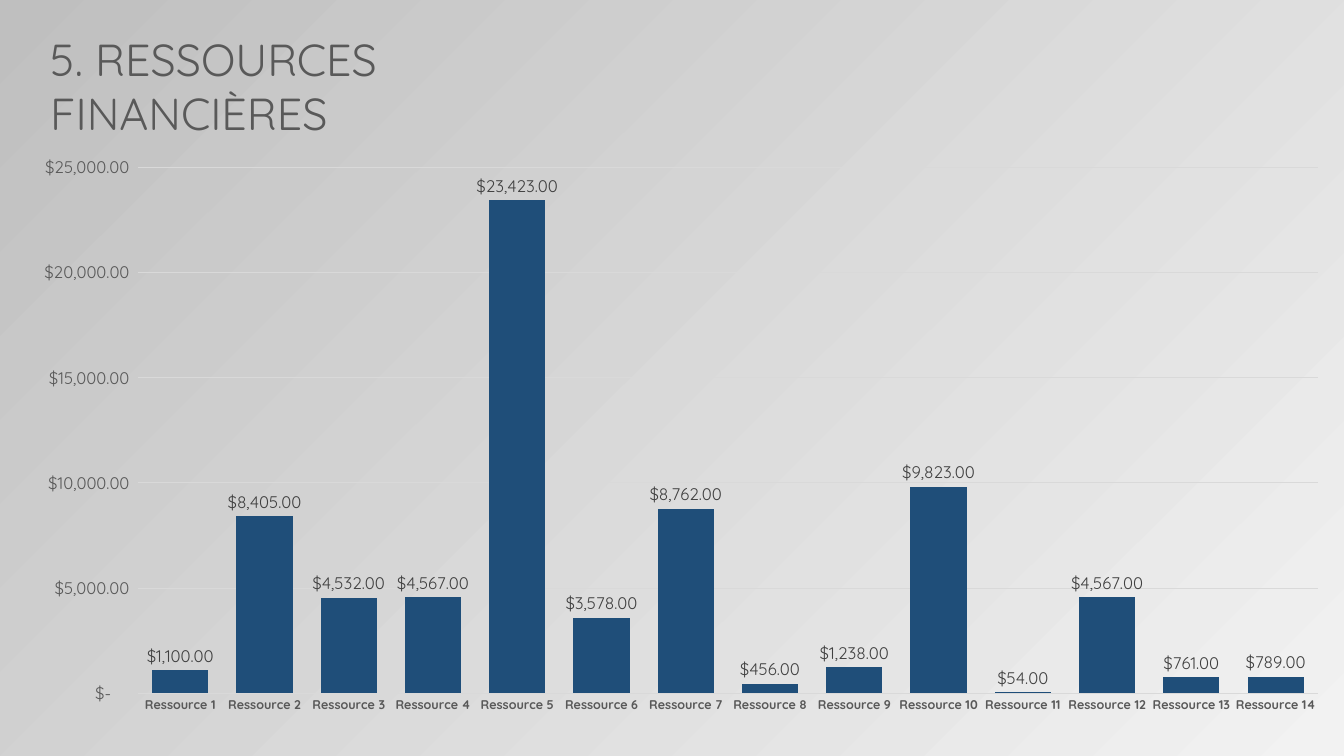
"""Build the financial resources slide with its column chart."""
from dataclasses import dataclass

from lxml import etree
from pptx import Presentation
from pptx import util as u
from pptx.chart import data as chart_data
from pptx.dml import color
from pptx.enum import chart as chart_enum
from pptx.oxml import ns


@dataclass(frozen=True)
class Theme:
    font: str = "Quicksand"
    ink: str = "595959"
    label_ink: str = "404040"
    bar: str = "1F4E79"
    rule: str = "D9D9D9"
    light: str = "F2F2F2"
    dark: str = "BFBFBF"
    title_size: int = 32
    value_size: int = 12
    category_size: int = 9
    rule_width: float = 0.75


@dataclass(frozen=True)
class Box:
    left: float
    top: float
    width: float
    height: float

    def lengths(self) -> list:
        return [u.Inches(n) for n in (self.left, self.top, self.width, self.height)]


THEME = Theme()
TITLE_BOX = Box(0.4, 0.27, 5.66, 0.64)
CHART_BOX = Box(0.12, 1.45, 13.21, 5.75)
PLOT_BOX = Box(1.37, 1.66, 11.7, 5.22)
DOLLARS = '_("$"* #,##0.00_);_("$"* \\(#,##0.00\\);_("$"* "-"??_);_(@_)'
AMOUNTS = (1100, 8405, 4532, 4567, 23423, 3578, 8762,
           456, 1238, 9823, 54, 4567, 761, 789)


def rgb(code: str) -> color.RGBColor:
    return color.RGBColor.from_string(code)


def style_font(font, size: int, ink: str, bold: bool = False) -> None:
    font.name = THEME.font
    font.size = u.Pt(size)
    font.bold = bold
    font.color.rgb = rgb(ink)


def style_rule(line) -> None:
    line.color.rgb = rgb(THEME.rule)
    line.width = u.Pt(THEME.rule_width)


def paint_background(slide) -> None:
    fill = slide.background.fill
    fill.gradient()
    fill.gradient_angle = 135
    for stop, code in zip(fill.gradient_stops, (THEME.light, THEME.dark)):
        stop.color.rgb = rgb(code)


def add_title(slide, wording: str) -> None:
    frame = slide.shapes.add_textbox(*TITLE_BOX.lengths()).text_frame
    frame.word_wrap = True
    heading = frame.paragraphs[0]
    heading.text = wording
    style_font(heading.font, THEME.title_size, THEME.ink)


def place_plot(chart, plot: Box, outer: Box) -> None:
    area = chart.plots[0]._element.getparent()
    for old in area.findall(ns.qn("c:layout")):
        area.remove(old)
    layout = etree.Element(ns.qn("c:layout"))
    manual = etree.SubElement(layout, ns.qn("c:manualLayout"))
    settings = {
        "layoutTarget": "inner", "xMode": "edge", "yMode": "edge",
        "x": (plot.left - outer.left) / outer.width,
        "y": (plot.top - outer.top) / outer.height,
        "w": plot.width / outer.width,
        "h": plot.height / outer.height,
    }
    for tag, value in settings.items():
        etree.SubElement(manual, ns.qn(f"c:{tag}")).set("val", str(value))
    area.insert(0, layout)


def style_axes(chart) -> None:
    resources, dollars = chart.category_axis, chart.value_axis
    for axis in (resources, dollars):
        axis.major_tick_mark = axis.minor_tick_mark = chart_enum.XL_TICK_MARK.NONE
    style_font(resources.tick_labels.font, THEME.category_size, THEME.ink, bold=True)
    style_rule(resources.format.line)
    style_font(dollars.tick_labels.font, THEME.value_size, THEME.ink)
    dollars.tick_labels.number_format = DOLLARS
    dollars.tick_labels.number_format_is_linked = False
    dollars.format.line.fill.background()
    dollars.minimum_scale, dollars.maximum_scale, dollars.major_unit = 0, 25000, 5000
    style_rule(dollars.major_gridlines.format.line)


def style_bars(bars) -> None:
    bars.gap_width = 50
    bars.vary_by_categories = False
    fill = bars.series[0].format.fill
    fill.solid()
    fill.fore_color.rgb = rgb(THEME.bar)
    bars.has_data_labels = True
    labels = bars.data_labels
    labels.show_value = True
    labels.position = chart_enum.XL_LABEL_POSITION.OUTSIDE_END
    labels.number_format = DOLLARS
    labels.number_format_is_linked = False
    style_font(labels.font, THEME.value_size, THEME.label_ink)


def add_resources_chart(slide) -> None:
    resources = chart_data.CategoryChartData(number_format=DOLLARS)
    resources.categories = [f"Ressource {n}" for n in range(1, len(AMOUNTS) + 1)]
    resources.add_series("Series 1", AMOUNTS)
    chart = slide.shapes.add_chart(
        chart_enum.XL_CHART_TYPE.COLUMN_CLUSTERED, *CHART_BOX.lengths(), resources
    ).chart
    chart.has_legend = False
    chart.has_title = False
    chart.font.name = THEME.font
    chart.font.size = u.Pt(10)
    style_axes(chart)
    style_bars(chart.plots[0])
    place_plot(chart, PLOT_BOX, CHART_BOX)


def main() -> None:
    deck = Presentation()
    deck.slide_width, deck.slide_height = u.Inches(13.33), u.Inches(7.5)
    slide = deck.slides.add_slide(deck.slide_layouts[6])
    paint_background(slide)
    add_resources_chart(slide)
    add_title(slide, "5. RESSOURCES FINANCIÈRES")
    deck.save("out.pptx")


if __name__ == "__main__":
    main()
